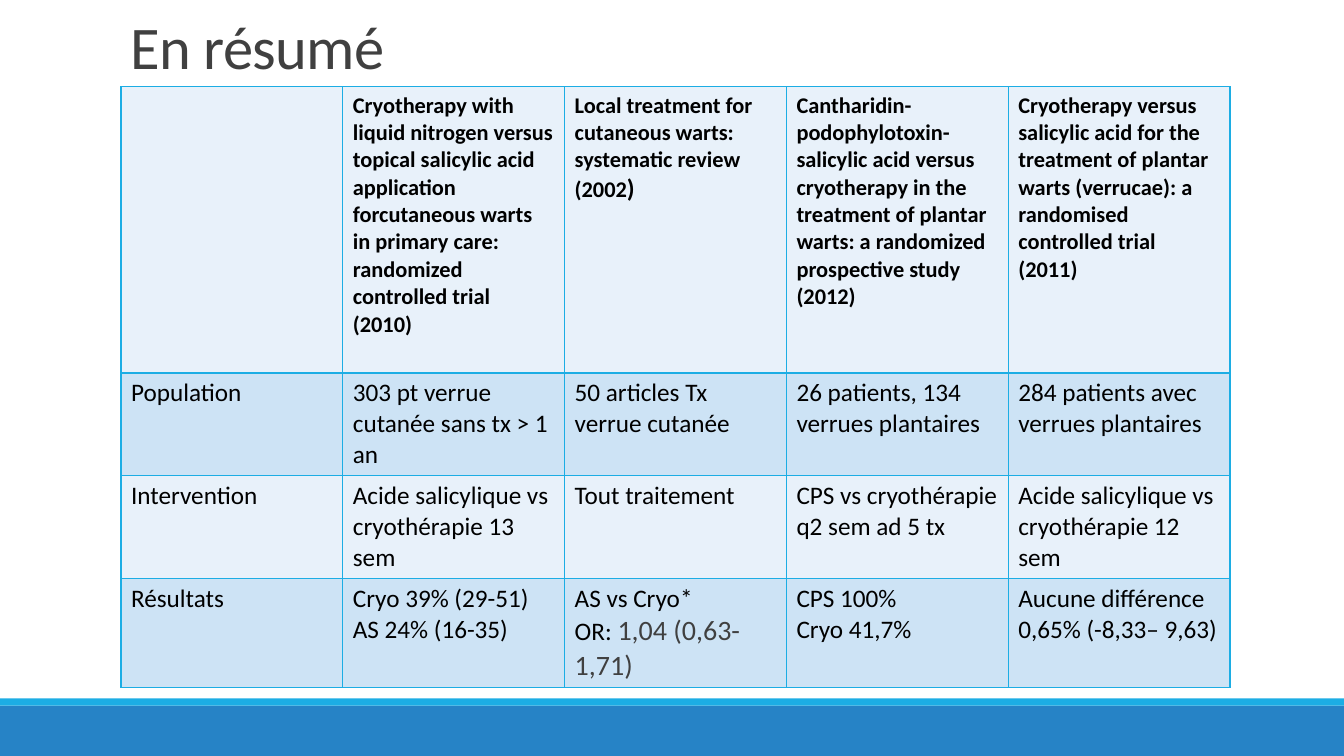
from lxml import etree
from pptx import Presentation
from pptx.dml.color import RGBColor
from pptx.enum import shapes, text
from pptx.oxml.ns import qn
from pptx.util import Inches, Pt

FONT = "Calibri"
COLOURS = {
    "ink": "000000",
    "grey": "404040",
    "light_row": "E8F1FA",
    "dark_row": "CDE3F5",
    "accent": "1CADE4",
    "footer": "2683C6",
}
WIDTH, HEIGHT = Inches(13.33), Inches(7.5)
LEFT, TABLE_TOP, TABLE_WIDTH = Inches(1.2), Inches(0.86), Inches(11)
ROW_HEIGHTS = [2.84, 1.02, 1.02, 1.08]

# A cell is a list of paragraphs; a pair is a paragraph with a larger tail.
SUMMARY = [
    [
        [],
        ["Cryotherapy with liquid nitrogen versus topical salicylic acid application "
         "forcutaneous warts in primary care: randomized controlled trial", "(2010)"],
        ["Local treatment for cutaneous warts: systematic review", ("(2002", ")")],
        ["Cantharidin-podophylotoxin-salicylic acid versus cryotherapy in the "
         "treatment of plantar warts: a randomized prospective study", "(2012)"],
        ["Cryotherapy versus salicylic acid for the treatment of plantar warts "
         "(verrucae): a randomised controlled trial", "(2011)"],
    ],
    [
        ["Population"],
        ["303 pt verrue cutanée sans tx > 1 an"],
        ["50 articles Tx verrue cutanée"],
        ["26 patients, 134 verrues plantaires"],
        ["284 patients avec verrues plantaires"],
    ],
    [
        ["Intervention"],
        ["Acide salicylique vs cryothérapie 13 sem"],
        ["Tout traitement"],
        ["CPS vs cryothérapie q2 sem ad 5 tx"],
        ["Acide salicylique vs cryothérapie 12 sem"],
    ],
    [
        ["Résultats"],
        ["Cryo 39% (29-51)", "AS 24% (16-35)"],
        ["AS vs Cryo*", ("OR: ", "1,04 (0,63-1,71)")],
        ["CPS 100%", "Cryo 41,7%"],
        ["Aucune différence", "0,65% (-8,33– 9,63)"],
    ],
]


def colour(name):
    return RGBColor.from_string(COLOURS[name])


def add_span(para, words, size, ink, bold=False):
    span = para.add_run()
    span.text = words
    span.font.name, span.font.size, span.font.bold = FONT, Pt(size), bold
    span.font.color.rgb = colour(ink)
    return span


def add_bar(page, top, height, fill):
    bar = page.shapes.add_shape(
        shapes.MSO_SHAPE.RECTANGLE, 0, Inches(top), WIDTH, Inches(height))
    bar.shadow.inherit = False
    bar.fill.solid()
    bar.fill.fore_color.rgb = colour(fill)
    bar.line.fill.background()


def add_title(page, words):
    box = page.shapes.add_textbox(LEFT, Inches(0.41), TABLE_WIDTH, Inches(0.45))
    frame = box.text_frame
    frame.word_wrap = True
    frame.vertical_anchor = text.MSO_ANCHOR.BOTTOM
    para = frame.paragraphs[0]
    para.line_spacing = 0.85
    span = add_span(para, words, 43.2, "grey")
    span.font._element.set("spc", "-50")


def add_borders(cell):
    properties = cell._tc.get_or_add_tcPr()
    for side in ("a:lnL", "a:lnR", "a:lnT", "a:lnB"):
        line = etree.SubElement(properties, qn(side), w=str(Pt(1)))
        fill = etree.SubElement(line, qn("a:solidFill"))
        etree.SubElement(fill, qn("a:srgbClr"), val=COLOURS["accent"])


def fill_cell(cell, content, is_header, fill):
    add_borders(cell)
    cell.fill.solid()
    cell.fill.fore_color.rgb = colour(fill)
    size, tail_ink = (16, "ink") if is_header else (18, "grey")
    frame = cell.text_frame
    for index, words in enumerate(content):
        para = frame.add_paragraph() if index else frame.paragraphs[0]
        lead, tail = words if isinstance(words, tuple) else (words, "")
        add_span(para, lead, size, "ink", is_header)
        if tail:
            add_span(para, tail, size + 2, tail_ink, is_header)


def add_summary_table(page):
    columns = len(SUMMARY[0])
    table = page.shapes.add_table(
        len(SUMMARY), columns, LEFT, TABLE_TOP,
        TABLE_WIDTH, Inches(sum(ROW_HEIGHTS))).table
    for column in table.columns:
        column.width = TABLE_WIDTH // columns
    for row, contents in enumerate(SUMMARY):
        table.rows[row].height = Inches(ROW_HEIGHTS[row])
        fill = "dark_row" if row % 2 else "light_row"
        for column, content in enumerate(contents):
            fill_cell(table.cell(row, column), content, row == 0, fill)


def main():
    deck = Presentation()
    deck.slide_width, deck.slide_height = WIDTH, HEIGHT
    page = deck.slides.add_slide(deck.slide_layouts[6])
    add_bar(page, 7, 0.5, "footer")
    add_bar(page, 6.93, 0.07, "accent")
    add_title(page, "En résumé")
    add_summary_table(page)
    deck.save("out.pptx")


if __name__ == "__main__":
    main()
